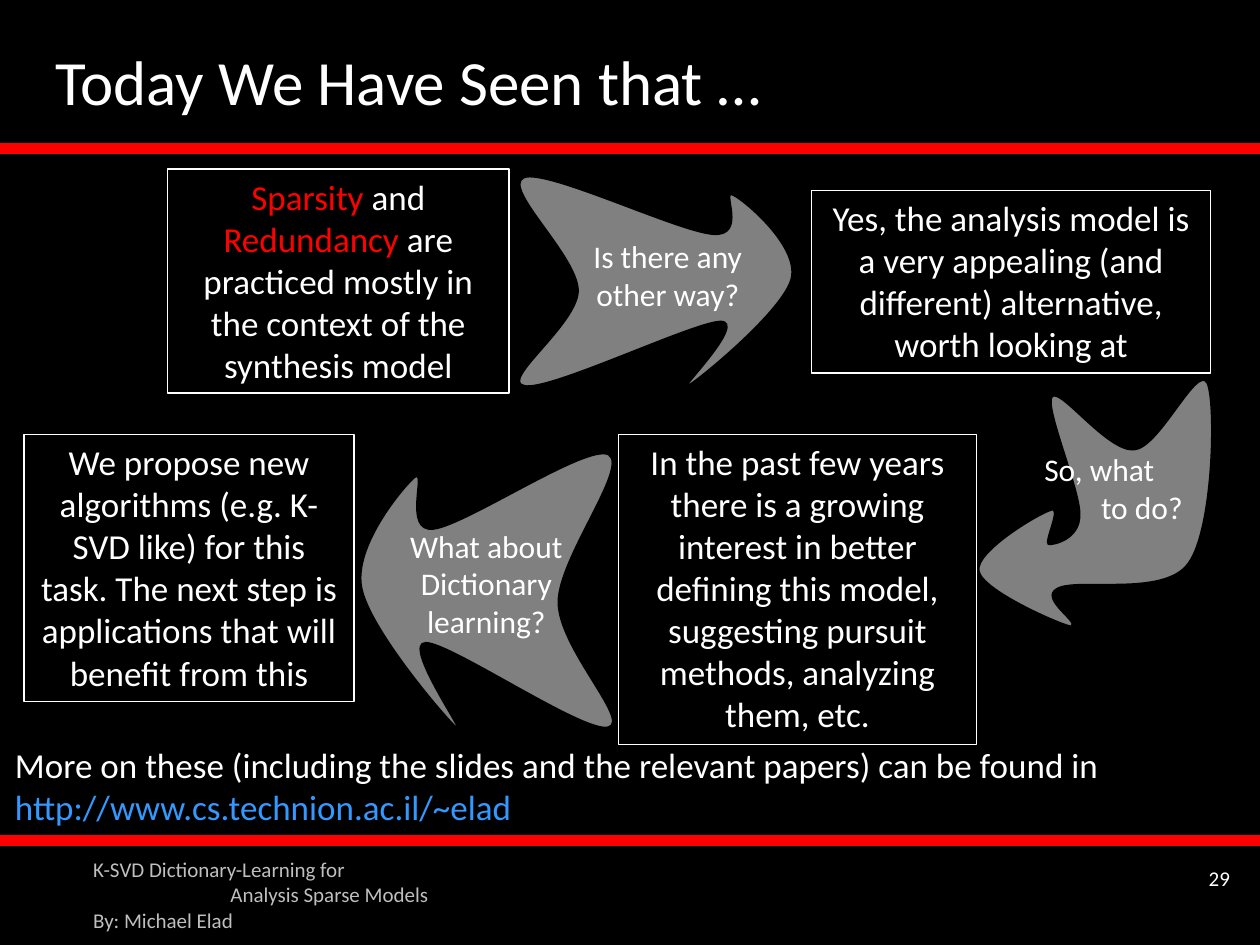
from lxml import etree
from pptx import Presentation
from pptx.dml.color import RGBColor
from pptx.enum.shapes import MSO_CONNECTOR, MSO_SHAPE
from pptx.enum.text import MSO_ANCHOR, PP_ALIGN
from pptx.oxml.ns import qn
from pptx.util import Pt

PX = 9144  # one px is a hundredth of an inch
FONT = "Calibri"
LEFT, CENTER, RIGHT = PP_ALIGN.LEFT, PP_ALIGN.CENTER, PP_ALIGN.RIGHT
TOP, MIDDLE = MSO_ANCHOR.TOP, MSO_ANCHOR.MIDDLE
COLORS = {"black": "000000", "white": "FFFFFF", "red": "FF0000",
          "gray": "808080", "silver": "BFBFBF", "link": "3399FF"}

# A paragraph is (indent, [(words, color), ...])
RULES = [118, 667]

BOXES = [
    ((133, 134, 271, 178), [
        ("Sparsity", "red"), (" and ", "white"), ("Redundancy", "red"),
        (" are practiced mostly in the context of the synthesis model", "white")]),
    ((644, 151, 317, 145), [
        ("Yes, the analysis model is a very appealing (and different) "
         "alternative, worth looking at", "white")]),
    ((491, 345, 284, 246), [
        ("In the past few years there is a growing interest in better defining "
         "this model, suggesting pursuit methods, analyzing them, etc.", "white")]),
    ((19, 345, 262, 212), [
        ("We propose new algorithms (e.g. K-SVD like) for this task. The next "
         "step is applications that will benefit from this", "white")]),
]

# Each arrow: start point, then cubic curves (control, control, end)
ARROWS = [
    [(416, 141),
     (434, 134), (538, 184), (566, 186), (594, 188), (572, 149), (582, 155),
     (592, 160), (634, 196), (628, 221), (622, 246), (555, 301), (546, 306),
     (537, 312), (594, 255), (572, 255), (551, 255), (435, 311), (416, 306),
     (397, 302), (458, 258), (459, 231), (459, 203), (398, 149), (416, 141)],
    [(835, 315),
     (829, 323), (858, 390), (857, 409), (857, 428), (836, 433), (832, 432),
     (828, 431), (843, 401), (834, 405), (824, 408), (774, 438), (777, 453),
     (779, 468), (840, 495), (850, 497), (857, 494), (824, 475), (839, 467),
     (855, 458), (924, 474), (943, 447), (963, 420), (965, 319), (958, 304),
     (950, 289), (920, 356), (900, 357), (879, 359), (841, 307), (835, 315)],
    [(483, 361),
     (466, 352), (370, 417), (344, 420), (319, 423), (339, 371), (329, 379),
     (320, 387), (281, 433), (287, 466), (293, 499), (354, 570), (362, 577),
     (371, 585), (318, 510), (338, 510), (358, 510), (465, 583), (483, 577),
     (500, 572), (443, 514), (443, 478), (443, 443), (499, 371), (483, 361)],
]

# Frame, size, alignment, anchor, paragraphs
TEXTS = [
    ((0, 17, 987, 93), 36, LEFT, MIDDLE,
     [(34, [("Today We Have Seen that …", "white")])]),
    ((446, 183, 168, 71), 18, CENTER, TOP,
     [(0, [("Is there any other way?", "white")])]),
    ((816, 352, 168, 71), 18, LEFT, TOP,
     [(3, [("So, what", "white")]), (48, [("to do?", "white")])]),
    ((302, 413, 168, 101), 18, CENTER, TOP,
     [(0, [("What about Dictionary learning?", "white")])]),
    ((2, 585, 988, 77), 20, LEFT, TOP,
     [(0, [("More on these (including the slides and the relevant papers) "
            "can be found in ", "white"),
           ("http://www.cs.technion.ac.il/~elad", "link")])]),
    ((64, 675, 289, 75), 12, LEFT, TOP,
     [(0, [("K-SVD Dictionary-Learning for", "silver")]),
      (109, [("Analysis Sparse Models", "silver")]),
      (0, [("By: Michael Elad", "silver")])]),
    ((778, 682, 208, 50), 12, RIGHT, TOP, [(0, [("29", "white")])]),
]


def color(name):
    return RGBColor.from_string(COLORS[name])


def emu(lengths):
    return [length * PX for length in lengths]


def write(shape, size, align, anchor, paragraphs):
    frame = shape.text_frame
    frame.word_wrap = True
    frame.vertical_anchor = anchor
    for index, (indent, runs) in enumerate(paragraphs):
        para = frame.add_paragraph() if index else frame.paragraphs[0]
        para.alignment = align
        if indent:
            para._p.get_or_add_pPr().set("marL", str(indent * PX))
        for words, name in runs:
            span = para.add_run()
            span.text = words
            span.font.name = FONT
            span.font.size = Pt(size)
            span.font.color.rgb = color(name)


def outline(shape, name, width):
    shape.line.color.rgb = color(name)
    shape.line.width = Pt(width)


def add_rule(page, y):
    rule = page.shapes.add_connector(MSO_CONNECTOR.STRAIGHT, *emu((0, y, 1000, y)))
    outline(rule, "red", 6)
    etree.SubElement(rule._element.spPr, qn("a:effectLst"))


def add_curved_arrow(page, points):
    builder = page.shapes.build_freeform(*points[0], scale=PX)
    builder.add_line_segments(points[1:], close=True)
    arrow = builder.convert_to_shape()
    # Merge every three line segments into one cubic curve
    segments = list(arrow._element.iter(qn("a:lnTo")))
    for first in range(0, len(segments), 3):
        curve, *others = segments[first:first + 3]
        curve.tag = qn("a:cubicBezTo")
        for other in others:
            curve.append(other[0])
            other.getparent().remove(other)
    arrow.fill.solid()
    arrow.fill.fore_color.rgb = color("gray")
    outline(arrow, "black", 0.75)
    arrow.shadow.inherit = False


def main():
    deck = Presentation()
    deck.slide_width, deck.slide_height = emu((1000, 750))
    page = deck.slides.add_slide(deck.slide_layouts[6])
    page.background.fill.solid()
    page.background.fill.fore_color.rgb = color("black")

    # Red rules and gray arrows
    for y in RULES:
        add_rule(page, y)
    for points in ARROWS:
        add_curved_arrow(page, points)

    # Framed statements
    for place, runs in BOXES:
        box = page.shapes.add_shape(MSO_SHAPE.RECTANGLE, *emu(place))
        box.fill.background()
        outline(box, "white", 0.75)
        box.shadow.inherit = False
        write(box, 20, CENTER, TOP, [(0, runs)])

    # Title, arrow labels, link and footer
    for place, size, align, anchor, paragraphs in TEXTS:
        box = page.shapes.add_textbox(*emu(place))
        write(box, size, align, anchor, paragraphs)

    deck.save("out.pptx")


if __name__ == "__main__":
    main()
